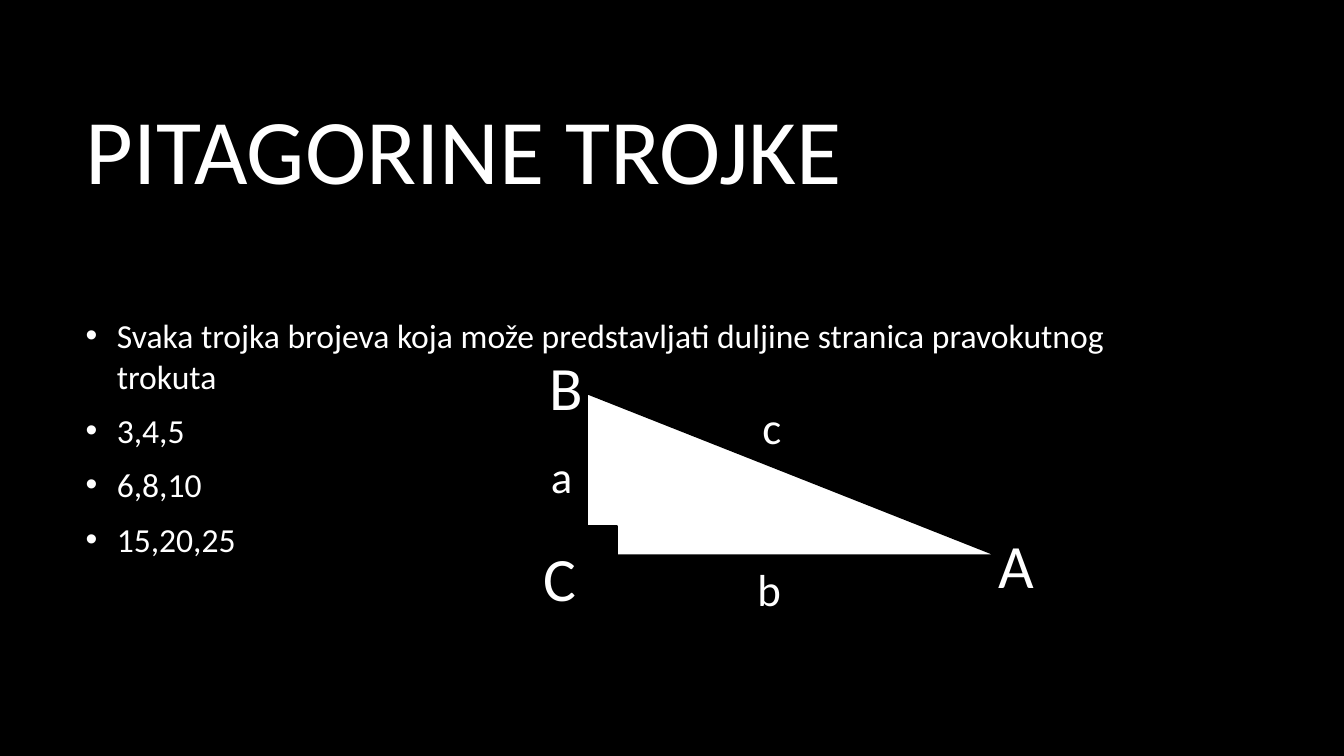
from dataclasses import dataclass

import pptx
import pptx.dml.color
import pptx.enum.shapes
import pptx.enum.text
import pptx.oxml.ns
import pptx.util
from lxml import etree

Inches = pptx.util.Inches
Pt = pptx.util.Pt
Color = pptx.dml.color.RGBColor
Kind = pptx.enum.shapes.MSO_SHAPE
Align = pptx.enum.text.PP_ALIGN
Anchor = pptx.enum.text.MSO_ANCHOR
qn = pptx.oxml.ns.qn


@dataclass(frozen=True)
class Theme:
    font: str = "Calibri"
    dark: Color = Color(0, 0, 0)
    light: Color = Color(255, 255, 255)
    title: int = 66
    body: int = 24
    vertex: int = 44
    side: int = 32
    line: float = 1.5


@dataclass(frozen=True)
class Box:
    left: float
    top: float
    width: float
    height: float

    def lengths(self) -> tuple:
        return tuple(Inches(v) for v in (self.left, self.top, self.width, self.height))


@dataclass(frozen=True)
class Label:
    text: str
    box: Box
    size: int


@dataclass(frozen=True)
class Figure:
    kind: Kind
    box: Box
    fill: Color


THEME = Theme()
TITLE = Label("PITAGORINE TROJKE", Box(0.75, 0.67, 11.08, 1.59), THEME.title)
BODY = Box(0.75, 2.34, 11.08, 3.99)
POINTS = (
    "Svaka trojka brojeva koja može predstavljati duljine stranica pravokutnog trokuta",
    "3,4,5",
    "6,8,10",
    "15,20,25",
)
LABELS = (
    Label("a", Box(5.32, 4.4, 0.5, 0.64), THEME.side),
    Label("b", Box(7.41, 5.52, 0.44, 0.64), THEME.side),
    Label("c", Box(7.46, 3.92, 0.39, 0.64), THEME.side),
    Label("A", Box(9.8, 5.18, 0.56, 0.84), THEME.vertex),
    Label("B", Box(5.35, 3.41, 0.54, 0.84), THEME.vertex),
    Label("C", Box(5.29, 5.31, 0.53, 0.84), THEME.vertex),
)
TRIANGLE = Figure(Kind.RIGHT_TRIANGLE, Box(5.82, 3.9, 4.07, 1.61), THEME.light)
CORNER = Figure(Kind.RECTANGLE, Box(5.82, 5.22, 0.3, 0.29), THEME.dark)


def add_frame(slide, box: Box, anchor: Anchor, wrap: bool):
    frame = slide.shapes.add_textbox(*box.lengths()).text_frame
    frame.word_wrap = wrap
    frame.vertical_anchor = anchor
    return frame


def style(para, size: int) -> None:
    para.font.name = THEME.font
    para.font.size = Pt(size)
    para.font.color.rgb = THEME.light


def add_bullet(para) -> None:
    props = para._p.get_or_add_pPr()
    props.set("marL", str(Inches(0.31)))
    props.set("indent", str(-Inches(0.31)))
    tint = etree.SubElement(props, qn("a:buClr"))
    etree.SubElement(tint, qn("a:srgbClr")).set("val", str(THEME.light))
    etree.SubElement(props, qn("a:buFont")).set("typeface", "Arial")
    etree.SubElement(props, qn("a:buChar")).set("char", "•")


def add_title(slide, label: Label) -> None:
    para = add_frame(slide, label.box, Anchor.MIDDLE, True).paragraphs[0]
    para.text = label.text
    style(para, label.size)


def add_list(slide, box: Box, points: tuple[str, ...]) -> None:
    frame = add_frame(slide, box, Anchor.MIDDLE, True)
    frame.text = "\n".join(points)
    for para in frame.paragraphs:
        add_bullet(para)
        para.space_after = Pt(10)
        style(para, THEME.body)


def add_label(slide, label: Label) -> None:
    para = add_frame(slide, label.box, Anchor.TOP, False).paragraphs[0]
    para.text = label.text
    para.alignment = Align.CENTER
    style(para, label.size)


def add_figure(slide, figure: Figure) -> None:
    shape = slide.shapes.add_shape(figure.kind, *figure.box.lengths())
    shape.shadow.inherit = False
    shape.fill.solid()
    shape.fill.fore_color.rgb = figure.fill
    shape.line.color.rgb = THEME.dark
    shape.line.width = Pt(THEME.line)


def main() -> None:
    deck = pptx.Presentation()
    deck.slide_width = Inches(13.33)
    deck.slide_height = Inches(7.5)
    slide = deck.slides.add_slide(deck.slide_layouts[6])
    slide.background.fill.solid()
    slide.background.fill.fore_color.rgb = THEME.dark
    add_title(slide, TITLE)
    add_list(slide, BODY, POINTS)
    add_figure(slide, TRIANGLE)
    for label in LABELS:
        add_label(slide, label)
    add_figure(slide, CORNER)
    deck.save("out.pptx")


if __name__ == "__main__":
    main()
